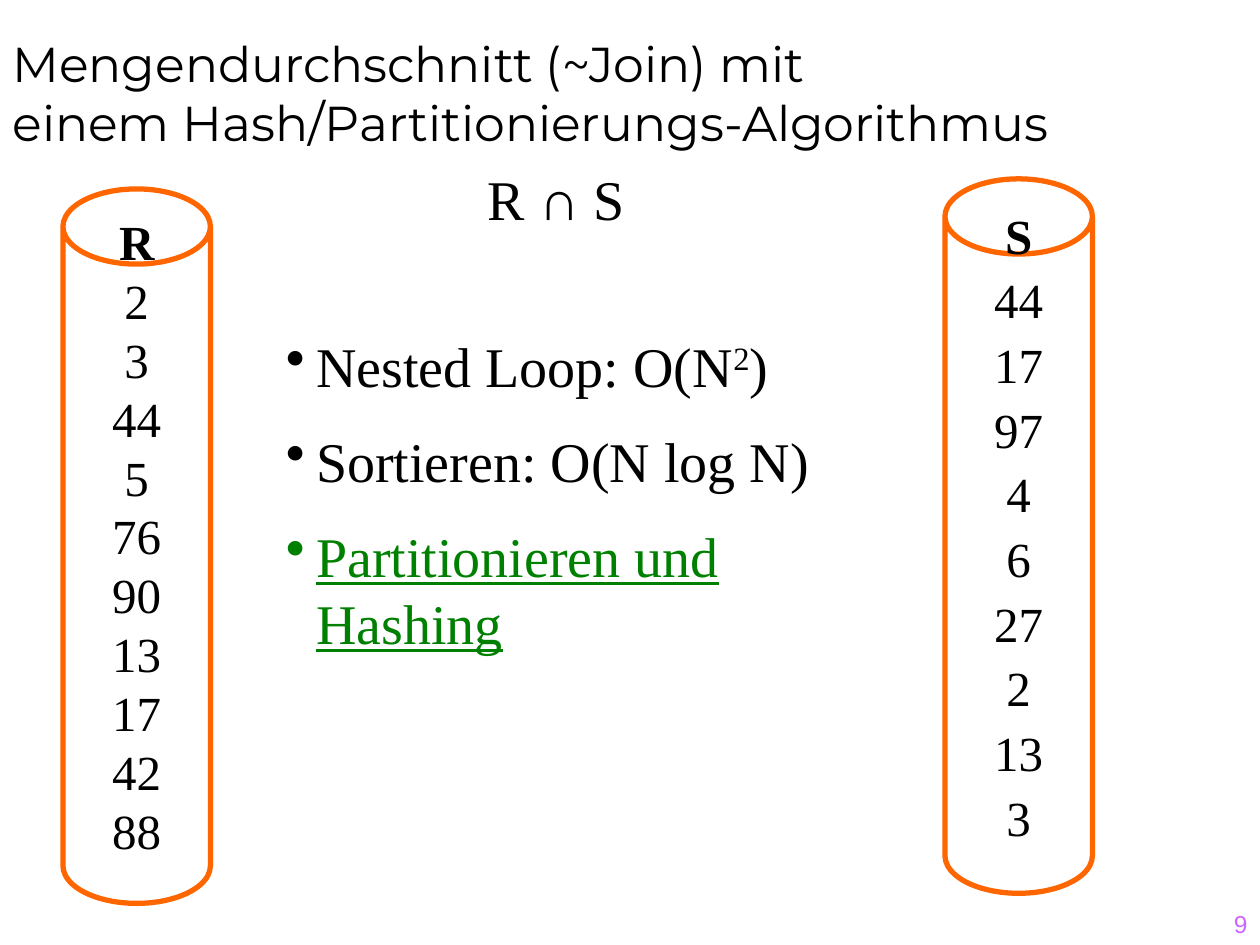
import pptx
import pptx.dml.color
import pptx.enum.shapes
import pptx.enum.text
import pptx.oxml
import pptx.oxml.ns
import pptx.util

Inches = pptx.util.Inches
Pt = pptx.util.Pt
Align = pptx.enum.text.PP_ALIGN
Anchor = pptx.enum.text.MSO_ANCHOR
Fit = pptx.enum.text.MSO_AUTO_SIZE


def color(code):
    return pptx.dml.color.RGBColor.from_string(code)


def write(para, text, size=28, font="Times New Roman", tint="000000",
          bold=False, line=False, raised=False):
    run = para.add_run()
    run.text = text
    run.font.size = Pt(size)
    run.font.name = font
    run.font.color.rgb = color(tint)
    run.font.bold = bold
    run.font.underline = line
    if raised:
        run.font._element.set("baseline", "30000")


def lines(frame, count):
    return [frame.paragraphs[0]] + [frame.add_paragraph() for _ in range(count - 1)]


def bullet(para, indent):
    props = para._p.get_or_add_pPr()
    props.set("marL", str(Inches(indent)))
    props.set("indent", str(-Inches(indent)))
    mark = pptx.oxml.parse_xml(
        f'<a:buChar {pptx.oxml.ns.nsdecls("a")} char="•"/>')
    props.append(mark)


class Deck:
    edge = "FF6600"
    fill = "FFFFFF"
    accent = "008000"

    def __init__(self):
        self.show = pptx.Presentation()
        self.show.slide_width = Inches(10)
        self.show.slide_height = Inches(7.5)
        self.slide = self.show.slides.add_slide(self.show.slide_layouts[5])

    def title(self, rows):
        head = self.slide.shapes.title
        head.left, head.top = Inches(0), Inches(0)
        head.width, head.height = Inches(10), Inches(1.25)
        frame = head.text_frame
        frame.auto_size = Fit.NONE
        frame.vertical_anchor = Anchor.BOTTOM
        para = frame.paragraphs[0]
        para.alignment = Align.LEFT
        for index, row in enumerate(rows):
            if index:
                para.add_line_break()
            write(para, row, font="Montserrat")

    def box(self, left, top, width, height, wrap=True, fit=Fit.NONE):
        shape = self.slide.shapes.add_textbox(
            Inches(left), Inches(top), Inches(width), Inches(height))
        frame = shape.text_frame
        frame.word_wrap = wrap
        frame.auto_size = fit
        return frame

    def label(self, text, left, top, width, height):
        frame = self.box(left, top, width, height, False, Fit.SHAPE_TO_FIT_TEXT)
        para = frame.paragraphs[0]
        para.alignment = Align.CENTER
        write(para, text, size=32)

    def number(self, text):
        frame = self.box(7.92, 7, 2.08, 0.5)
        frame.vertical_anchor = Anchor.BOTTOM
        para = frame.paragraphs[0]
        para.alignment = Align.RIGHT
        write(para, text, size=14, font="Arial", tint="CC66FF")

    def bullets(self, items, left, top, width, height):
        frame = self.box(left, top, width, height, fit=Fit.SHAPE_TO_FIT_TEXT)
        for index, (para, parts) in enumerate(zip(lines(frame, len(items)), items)):
            if index:
                para.space_before = Pt(16)
            bullet(para, 0.24)
            for text, style in parts:
                write(para, text, size=32, **style)

    def can(self, name, values, left, top, space, foot):
        shape = self.slide.shapes.add_shape(
            pptx.enum.shapes.MSO_SHAPE.CAN,
            Inches(left), Inches(top), Inches(1.17), Inches(5.67))
        shape.adjustments[0] = 0.51
        shape.shadow.inherit = False
        shape.fill.solid()
        shape.fill.fore_color.rgb = color(self.fill)
        shape.line.color.rgb = color(self.edge)
        shape.line.width = Pt(3)
        frame = shape.text_frame
        frame.word_wrap = False
        frame.vertical_anchor = Anchor.MIDDLE
        frame.margin_bottom = Inches(foot)
        rows = [name, *values]
        for para, row in zip(lines(frame, len(rows)), rows):
            para.alignment = Align.CENTER
            para.line_spacing = space
            write(para, str(row), bold=row == name)


def main():
    deck = Deck()
    deck.number("9")
    deck.title(["Mengendurchschnitt (~Join) mit ",
                "einem Hash/Partitionierungs-Algorithmus"])
    deck.can("R", [2, 3, 44, 5, 76, 90, 13, 17, 42, 88], 0.5, 1.5, 1.0, 0.52)
    deck.can("S", [44, 17, 97, 4, 6, 27, 2, 13, 3], 7.5, 1.42, 1.1, 0.56)
    deck.label("R ∩ S", 3.76, 1.26, 1.31, 0.63)
    deck.bullets([
        [("Nested Loop: O(N", {}), ("2", {"raised": True}), (")", {})],
        [("Sortieren: O(N log N)", {})],
        [("Partitionieren und Hashing", {"tint": deck.accent, "line": True})],
    ], 2.17, 2.58, 5.17, 3.03)
    deck.show.save("out.pptx")


if __name__ == "__main__":
    main()
